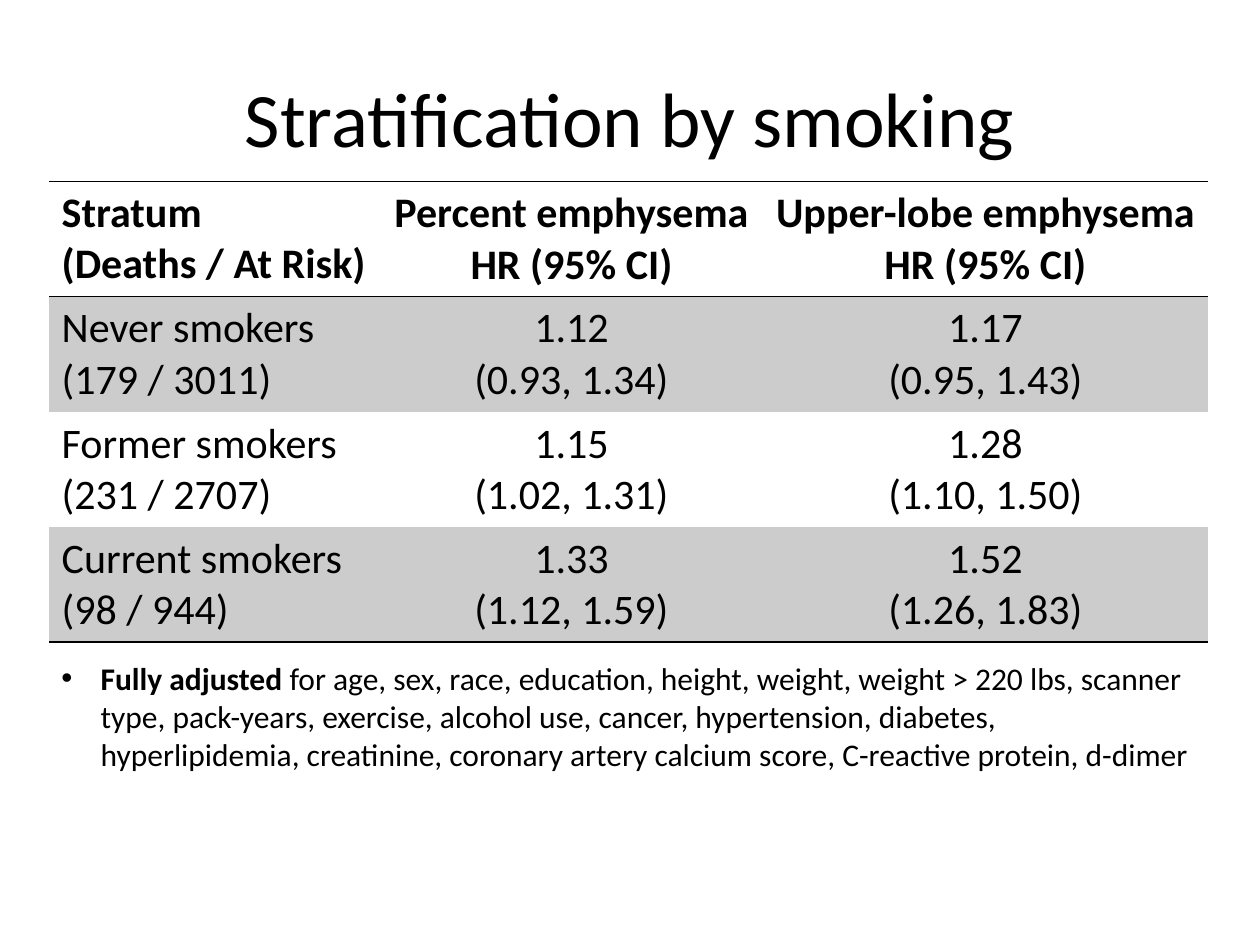
from lxml.etree import SubElement
from pptx import Presentation
from pptx.dml.color import RGBColor
from pptx.enum.text import MSO_ANCHOR as Anchor, PP_ALIGN as Align
from pptx.oxml.ns import qn
from pptx.util import Cm, Pt

BLACK = RGBColor(0x00, 0x00, 0x00)
BAND_GRAY = RGBColor(0xCC, 0xCC, 0xCC)
FONT = "Calibri"
LEFT, WIDTH = Cm(0.99), Cm(23.37)
COLUMN_WIDTHS = [Cm(6.68), Cm(7.7), Cm(8.99)]
ROW_HEIGHT = Cm(2.32)

ROWS = [
    ["Stratum\n(Deaths / At Risk)", "Percent emphysema\nHR (95% CI)", "Upper-lobe emphysema\nHR (95% CI)"],
    ["Never smokers\n(179 / 3011)", "1.12\n(0.93, 1.34)", "1.17\n(0.95, 1.43)"],
    ["Former smokers\n(231 / 2707)", "1.15\n(1.02, 1.31)", "1.28\n(1.10, 1.50)"],
    ["Current smokers\n(98 / 944)", "1.33\n(1.12, 1.59)", "1.52\n(1.26, 1.83)"],
]
ADJUSTMENTS = (
    "for age, sex, race, education, height, weight, weight > 220 lbs, scanner type, "
    "pack-years, exercise, alcohol use, cancer, hypertension, diabetes, hyperlipidemia, "
    "creatinine, coronary artery calcium score, C-reactive protein, d-dimer"
)


def add_span(para, text, size=24, bold=False):
    span = para.add_run()
    span.text = text
    span.font.name = FONT
    span.font.size = Pt(size)
    span.font.bold = bold
    span.font.color.rgb = BLACK


def write_lines(frame, text, align=Align.LEFT, **span_format):
    for index, line in enumerate(text.split("\n")):
        para = frame.add_paragraph() if index else frame.paragraphs[0]
        para.alignment = align
        add_span(para, line, **span_format)


def set_borders(cell, ruled_sides):
    properties = cell._tc.get_or_add_tcPr()
    for position, side in enumerate(["L", "R", "T", "B"]):
        line = properties.makeelement(qn(f"a:ln{side}"), {"w": str(Pt(1))})
        if side in ruled_sides:
            fill = SubElement(line, qn("a:solidFill"))
            SubElement(fill, qn("a:srgbClr"), val=str(BLACK))
        else:
            SubElement(line, qn("a:noFill"))
        properties.insert(position, line)


def add_title(page, text):
    title = page.shapes.title
    title.left, title.top, title.width, title.height = Cm(1.27), Cm(0.76), Cm(22.86), Cm(3.18)
    title.text_frame.vertical_anchor = Anchor.MIDDLE
    write_lines(title.text_frame, text, align=Align.CENTER, size=44)


def add_results_table(page):
    frame = page.shapes.add_table(
        len(ROWS), len(COLUMN_WIDTHS), LEFT, Cm(3.66), WIDTH, ROW_HEIGHT * len(ROWS)
    )
    table = frame.table
    table.first_row = table.horz_banding = False
    for column, width in zip(table.columns, COLUMN_WIDTHS):
        column.width = width
    for row_index, texts in enumerate(ROWS):
        table.rows[row_index].height = ROW_HEIGHT
        ruled_sides = {0: "TB", 1: "T", len(ROWS) - 1: "B"}.get(row_index, "")
        for column_index, text in enumerate(texts):
            cell = table.cell(row_index, column_index)
            align = Align.CENTER if column_index else Align.LEFT
            write_lines(cell.text_frame, text, align=align, bold=row_index == 0)
            if row_index == 0 and column_index:
                cell.vertical_anchor = Anchor.MIDDLE
            if row_index % 2:
                cell.fill.solid()
                cell.fill.fore_color.rgb = BAND_GRAY
            else:
                cell.fill.background()
            set_borders(cell, ruled_sides)


def add_footnote(page):
    box = page.shapes.add_textbox(LEFT, Cm(13.16), WIDTH, Cm(2.57))
    box.text_frame.word_wrap = True
    para = box.text_frame.paragraphs[0]
    properties = para._p.get_or_add_pPr()
    properties.set("marL", str(Cm(0.79)))
    properties.set("indent", str(-Cm(0.79)))
    SubElement(properties, qn("a:buFont"), typeface="Arial")
    SubElement(properties, qn("a:buChar"), char="•")
    add_span(para, "Fully adjusted ", size=18, bold=True)
    add_span(para, ADJUSTMENTS, size=18)


def main():
    deck = Presentation()
    deck.slide_width, deck.slide_height = Cm(25.4), Cm(19.05)
    page = deck.slides.add_slide(deck.slide_layouts[5])
    add_title(page, "Stratification by smoking")
    add_results_table(page)
    add_footnote(page)
    deck.save("out.pptx")


if __name__ == "__main__":
    main()
